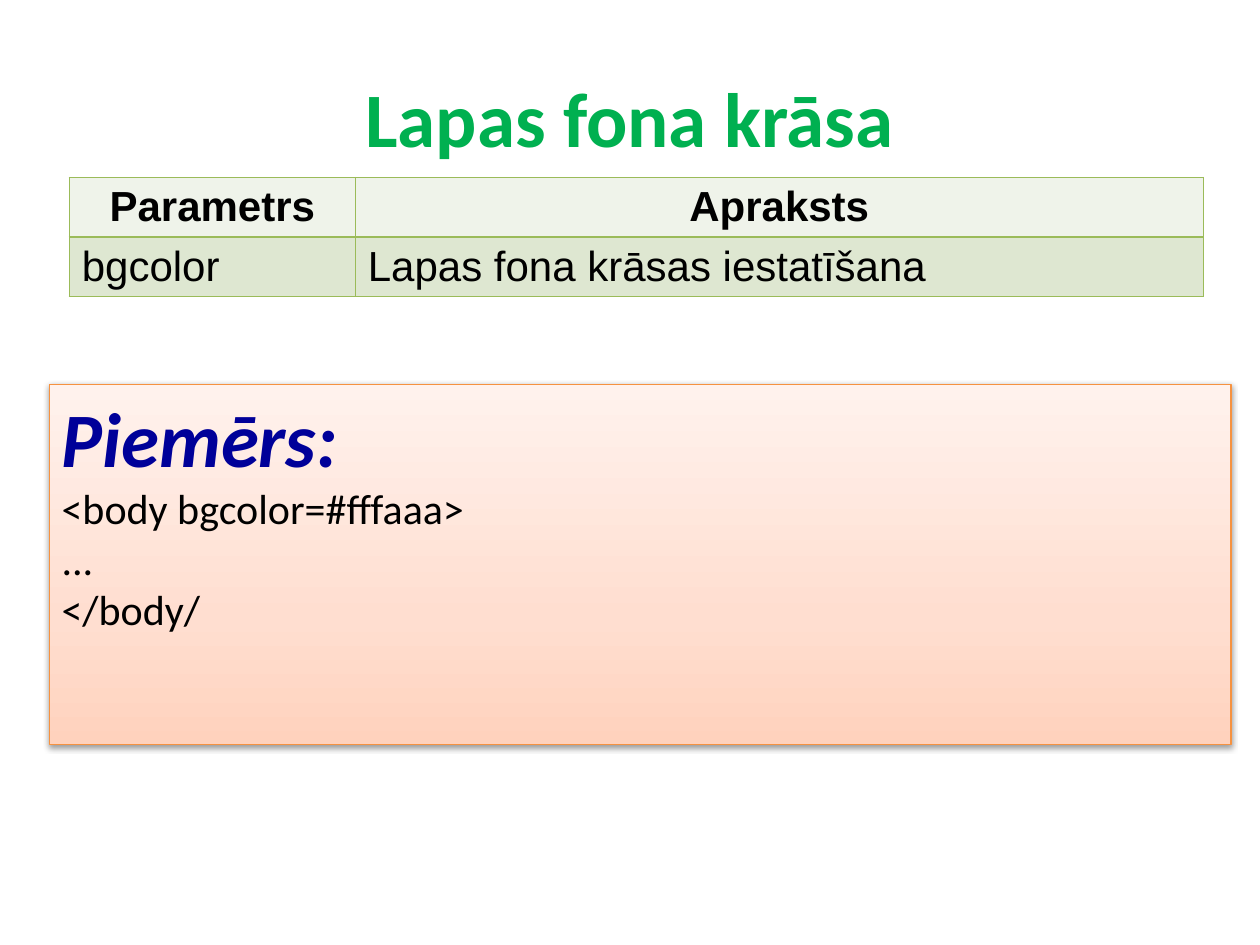
from lxml.etree import SubElement as Sub
from pptx import Presentation
from pptx.dml.color import RGBColor
from pptx.enum.shapes import MSO_SHAPE as Kind
from pptx.enum.text import MSO_ANCHOR as Anchor, PP_ALIGN as Align
from pptx.oxml.ns import qn
from pptx.util import Inches, Pt


def rgb(code):
    return RGBColor.from_string(code)


def style(para, size, face, code, bold=False, slant=False):
    font = para.font
    font.size, font.name, font.bold, font.italic = Pt(size), face, bold, slant
    font.color.rgb = rgb(code)


deck = Presentation()
deck.slide_width, deck.slide_height = Inches(10), Inches(7.5)
slide = deck.slides.add_slide(deck.slide_layouts[5])

title = slide.shapes.title
title.left, title.top = Inches(0.5), Inches(0.3)
title.width, title.height = Inches(9), Inches(1.25)
frame = title.text_frame
frame.text = "Lapas fona krāsa"
frame.vertical_anchor = Anchor.MIDDLE
frame.paragraphs[0].alignment = Align.CENTER
style(frame.paragraphs[0], 44, "Calibri", "00B050", True)

rows = [("Parametrs", "Apraksts"), ("bgcolor", "Lapas fona krāsas iestatīšana")]
fills = ["EFF3EA", "DEE7D1"]
table = slide.shapes.add_table(
    2, 2, Inches(0.55), Inches(1.41), Inches(9), Inches(0.94)).table
table.columns[0].width, table.columns[1].width = Inches(2.27), Inches(6.73)
for r, row in enumerate(rows):
    for c, text in enumerate(row):
        cell = table.cell(r, c)
        cell.text = text
        para = cell.text_frame.paragraphs[0]
        para.alignment = Align.LEFT if r else Align.CENTER
        style(para, 24, "Arial", "000000", r == 0)
        props = cell._tc.get_or_add_tcPr()
        for side in ("lnL", "lnR", "lnT", "lnB"):
            edge = Sub(props, qn("a:" + side), w=str(Pt(1)))
            Sub(Sub(edge, qn("a:solidFill")), qn("a:srgbClr"), val="9BBB59")
        cell.fill.solid()
        cell.fill.fore_color.rgb = rgb(fills[r])

box = slide.shapes.add_shape(
    Kind.RECTANGLE, Inches(0.39), Inches(3.05), Inches(9.38), Inches(2.86))
box.line.color.rgb = rgb("F69240")
box.line.width = Pt(0.75)
box.fill.gradient()
grad = box._element.spPr.find(qn("a:gradFill"))
for child in list(grad):
    grad.remove(child)
stops = Sub(grad, qn("a:gsLst"))
for place, code in ((0, "FFD2BD"), (35, "FFDED0"), (100, "FFF2ED")):
    stop = Sub(stops, qn("a:gs"), pos=str(place * 1000))
    Sub(stop, qn("a:srgbClr"), val=code)
Sub(grad, qn("a:lin"), ang="16200000", scaled="0")

box.shadow.inherit = False
glow = Sub(box._element.spPr.find(qn("a:effectLst")), qn("a:outerShdw"),
           blurRad=str(Pt(3.1)), dist=str(Pt(1.6)), dir="5400000", rotWithShape="0")
tint = Sub(glow, qn("a:srgbClr"), val="000000")
Sub(tint, qn("a:alpha"), val="38000")

frame = box.text_frame
frame.word_wrap = True
frame.vertical_anchor = Anchor.TOP
frame.text = "Piemērs:\n<body bgcolor=#fffaaa>\n...\n</body/"
head, *code = frame.paragraphs
style(head, 44, "Calibri", "000099", True, True)
for para in code:
    style(para, 24, "Calibri", "000000")
for para in frame.paragraphs:
    para.alignment = Align.LEFT

deck.save("out.pptx")
